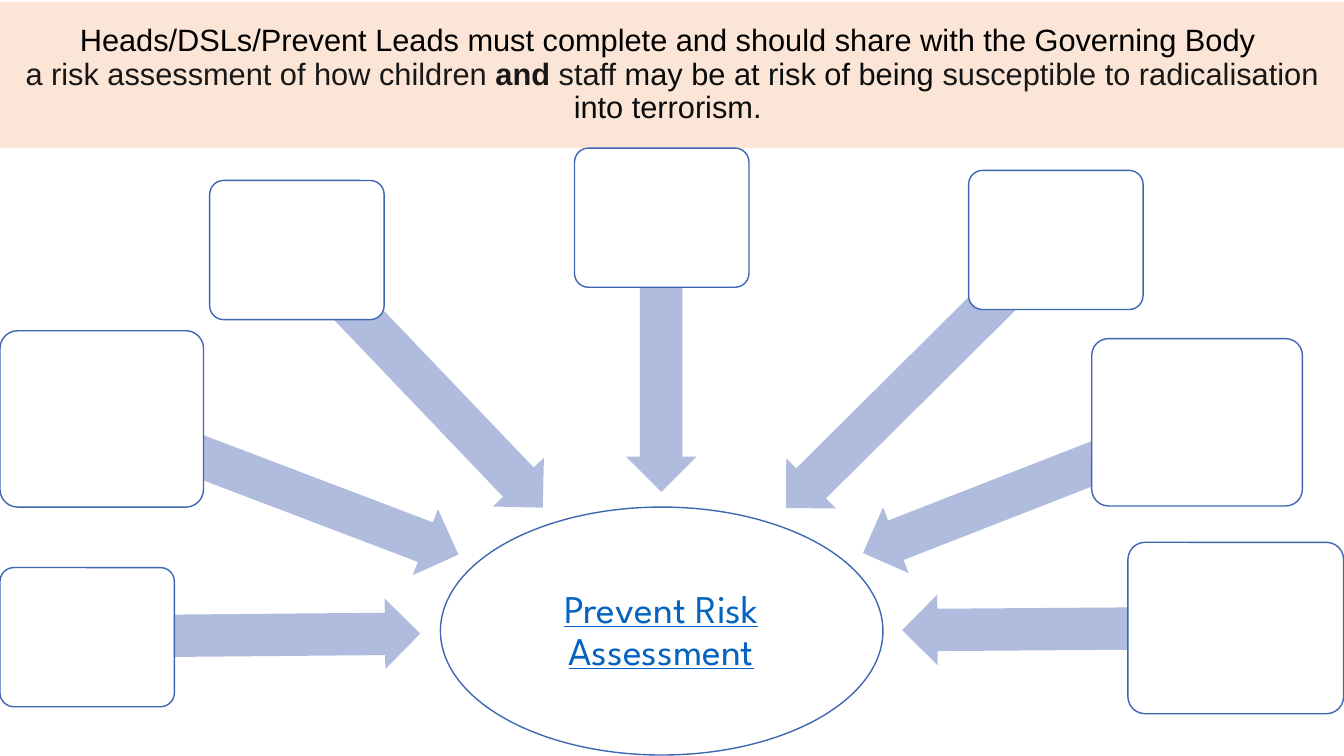
from pptx import Presentation
from pptx.dml.color import RGBColor
from pptx.enum import shapes, text
from pptx.util import Pt

PEACH = RGBColor(0xFB, 0xE5, 0xD6)
WHITE = RGBColor(0xFF, 0xFF, 0xFF)
BLUE = RGBColor(0x3E, 0x67, 0xB2)
LAVENDER = RGBColor(0xB0, 0xBC, 0xDE)
LINK_BLUE = RGBColor(0x05, 0x63, 0xC1)
BLACK = RGBColor(0, 0, 0)
CHARCOAL = RGBColor(0x18, 0x17, 0x17)
INK = RGBColor(0x0B, 0x0C, 0x0C)

TITLE_LINES = [
    [("Heads/DSLs/Prevent Leads must complete and should share with the Governing Body ", BLACK, False)],
    [("a risk assessment of how children ", CHARCOAL, False),
     ("and", CHARCOAL, True),
     (" staff ", CHARCOAL, False),
     ("may be at risk of being ", INK, False),
     ("susceptible to radicalisation ", CHARCOAL, False),
     ("into terrorism. ", INK, False)],
]

ARROW_HEIGHT = 50.4
SMALL_BOX = (124.6, 99.4)
SPOKES = [
    ((61.9, 428.4, 238.3), 179.5, (0, 405.4, *SMALL_BOX)),
    ((64.1, 322.6, 272.2), 200.8, (0, 236.2, 145.4, 126)),
    ((172.8, 245.5, 254.2), 226.3, (149.8, 128.9, *SMALL_BOX)),
    ((374.4, 228.2, 195.8), 270, (410.4, 105.8, *SMALL_BOX)),
    ((522, 241.9, 272.2), 315.2, (691.9, 121.7, *SMALL_BOX)),
    ((607.7, 323.3, 256.3), 338.7, (779.8, 241.9, 150.5, 119.5)),
    ((644.4, 424.1, 238.3), 359.6, (805.7, 387.4, 154.1, 122.4)),
]


def add_shape(slide, kind, box, fill, line=None):
    """Add a flat filled shape, outlined only if a line colour is given."""
    sp = slide.shapes.add_shape(kind, *map(Pt, box))
    sp.shadow.inherit = False
    sp.fill.solid()
    sp.fill.fore_color.rgb = fill
    if line is None:
        sp.line.fill.background()
    else:
        sp.line.color.rgb = line
        sp.line.width = Pt(1)
    return sp


def set_up_text(tf):
    """Wrap and centre a text frame and return its first paragraph."""
    tf.word_wrap = True
    tf.vertical_anchor = text.MSO_ANCHOR.MIDDLE
    p = tf.paragraphs[0]
    p.alignment = text.PP_ALIGN.CENTER
    p.line_spacing = 0.9
    return p


def style_run(r, font, size, color):
    """Set the typeface, size and colour of a run."""
    r.font.name = font
    r.font.size = Pt(size)
    r.font.color.rgb = color


def add_title(slide):
    """Add the banner with its mixed-format sentence."""
    sp = add_shape(slide, shapes.MSO_SHAPE.RECTANGLE, (0, 1.4, 960, 104.4), PEACH)
    p = set_up_text(sp.text_frame)
    for i, line in enumerate(TITLE_LINES):
        if i:
            p.add_line_break()
        for words, color, bold in line:
            r = p.add_run()
            r.text = words
            style_run(r, "Arial", 22, color)
            r.font.bold = bold


def add_hub(slide):
    """Add the central ellipse and its underlined label."""
    add_shape(slide, shapes.MSO_SHAPE.OVAL, (314.6, 362.2, 316.1, 177.1), WHITE, BLUE)
    label = slide.shapes.add_textbox(*map(Pt, (360.7, 388.8, 223.2, 125.3)))
    tf = label.text_frame
    tf.margin_left = tf.margin_right = tf.margin_top = tf.margin_bottom = Pt(1.4)
    p = set_up_text(tf)
    p.text = "Prevent Risk Assessment"
    r = p.runs[0]
    style_run(r, "League Spartan", 28, LINK_BLUE)
    r.font.underline = True


def add_spoke(slide, arrow, angle, box):
    """Add an arrow towards the hub and the empty box it starts from."""
    sp = add_shape(slide, shapes.MSO_SHAPE.LEFT_ARROW, (*arrow, ARROW_HEIGHT), LAVENDER)
    sp.adjustments[0] = 0.6
    sp.adjustments[1] = 0.5
    sp.rotation = angle
    sp = add_shape(slide, shapes.MSO_SHAPE.ROUNDED_RECTANGLE, box, WHITE, BLUE)
    sp.adjustments[0] = 0.1


def main():
    """Build the slide and save it."""
    prs = Presentation()
    prs.slide_width, prs.slide_height = Pt(960), Pt(540)
    slide = prs.slides.add_slide(prs.slide_layouts[6])
    add_title(slide)
    add_hub(slide)
    for arrow, angle, box in SPOKES:
        add_spoke(slide, arrow, angle, box)
    prs.save("out.pptx")


if __name__ == "__main__":
    main()
